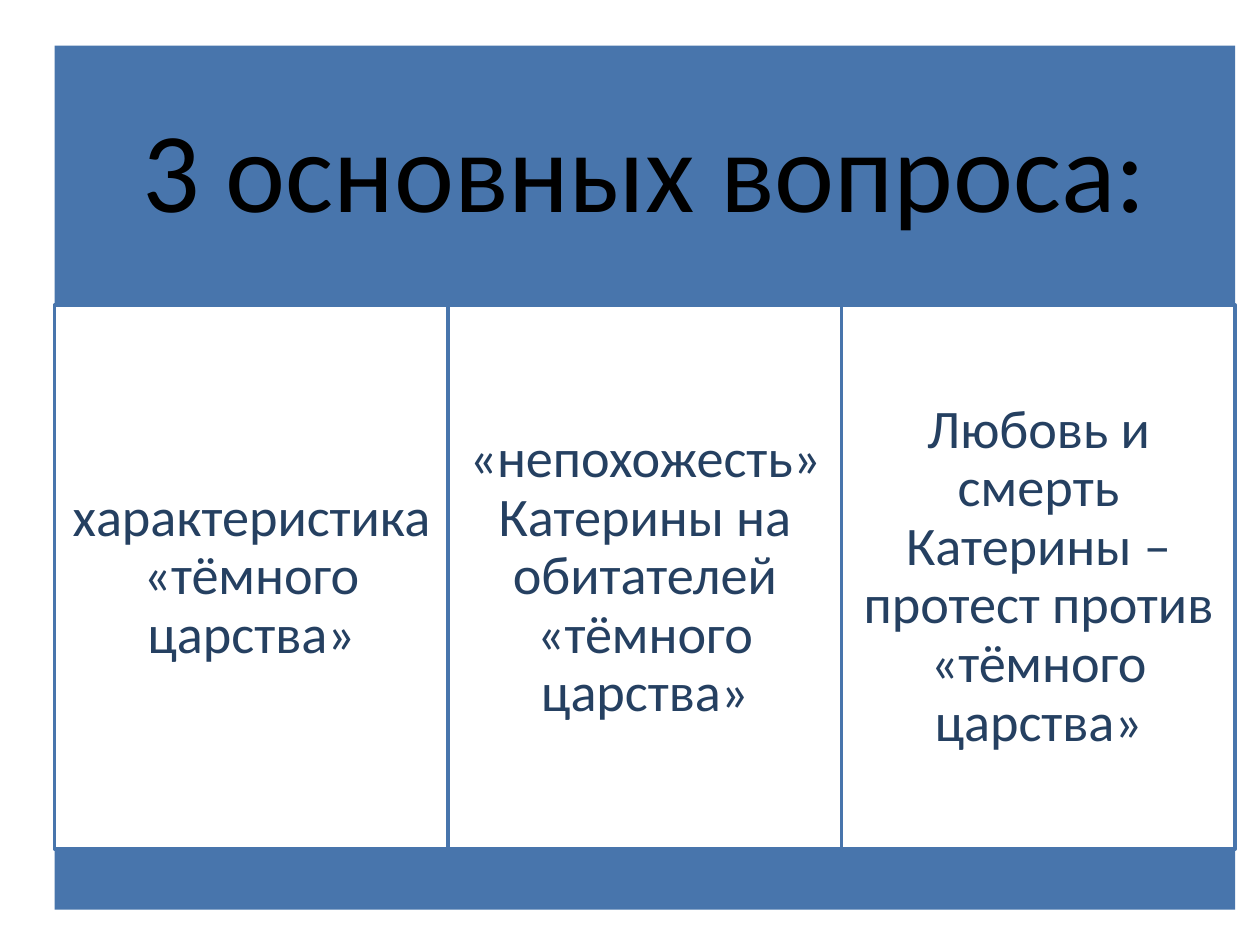
from pptx import Presentation
from pptx import util as u
from pptx.dml.color import RGBColor
from pptx.enum import shapes, text

BLUE = RGBColor(0x48, 0x75, 0xAC)
NAVY = RGBColor(0x25, 0x40, 0x61)
BLACK = RGBColor(0, 0, 0)
WHITE = RGBColor(0xFF, 0xFF, 0xFF)

LEFT, TOP, WIDTH = 1.1, 0.92, 23.8
HEADER_HEIGHT, PANEL_HEIGHT, FOOTER_HEIGHT = 5.23, 10.97, 1.22
QUESTIONS = [
    "характеристика «тёмного царства»",
    "«непохожесть» Катерины на обитателей «тёмного царства»",
    "Любовь и смерть Катерины – протест против «тёмного царства»",
]


class SlideBuilder:
    font = "Calibri"

    def __init__(self, slide):
        self.slide = slide

    def set_words(self, shape, words, size, color, inset):
        frame = shape.text_frame
        frame.text = words
        frame.word_wrap = True
        frame.auto_size = text.MSO_AUTO_SIZE.NONE
        frame.vertical_anchor = text.MSO_ANCHOR.MIDDLE
        frame.margin_left = frame.margin_right = u.Cm(inset)
        frame.margin_top = frame.margin_bottom = u.Cm(inset)
        paragraph = frame.paragraphs[0]
        paragraph.alignment = text.PP_ALIGN.CENTER
        paragraph.line_spacing = 0.9
        font = paragraph.runs[0].font
        font.name, font.size, font.color.rgb = self.font, u.Pt(size), color

    def title(self, words, left, top, width, height):
        shape = self.slide.shapes.title
        shape.left, shape.top = u.Cm(left), u.Cm(top)
        shape.width, shape.height = u.Cm(width), u.Cm(height)
        shape.fill.solid()
        shape.fill.fore_color.rgb = BLUE
        self.set_words(shape, words, 65, BLACK, 0.69)

    def band(self, left, top, width, height, fill=BLUE):
        shape = self.slide.shapes.add_shape(
            shapes.MSO_SHAPE.RECTANGLE,
            u.Cm(left), u.Cm(top), u.Cm(width), u.Cm(height))
        shape.shadow.inherit = False
        shape.fill.solid()
        shape.fill.fore_color.rgb = fill
        shape.line.fill.background()
        return shape

    def panel(self, words, left, top, width, height):
        shape = self.band(left, top, width, height, WHITE)
        shape.line.color.rgb = BLUE
        shape.line.width = u.Pt(2)
        self.set_words(shape, words, 31, NAVY, 0.33)


def main():
    presentation = Presentation()
    presentation.slide_width, presentation.slide_height = u.Cm(25.4), u.Cm(19.05)
    title_only = presentation.slide_layouts[5]
    builder = SlideBuilder(presentation.slides.add_slide(title_only))

    builder.title("3 основных вопроса:", LEFT, TOP, WIDTH, HEADER_HEIGHT)
    panel_top = TOP + HEADER_HEIGHT
    panel_width = WIDTH / len(QUESTIONS)
    for column, question in enumerate(QUESTIONS):
        builder.panel(question, LEFT + column * panel_width, panel_top,
                      panel_width, PANEL_HEIGHT)
    builder.band(LEFT, panel_top + PANEL_HEIGHT, WIDTH, FOOTER_HEIGHT)
    presentation.save("out.pptx")


if __name__ == "__main__":
    main()
